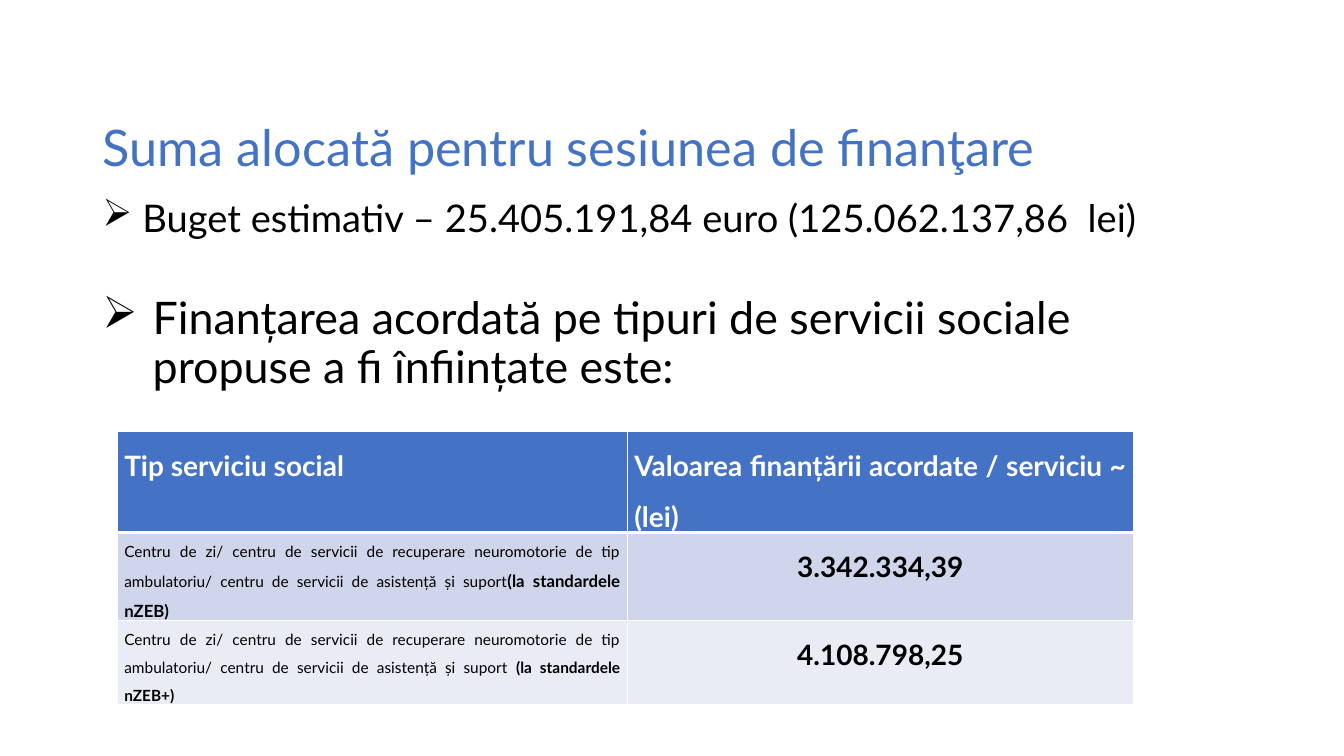
from dataclasses import dataclass

from lxml.etree import SubElement
from pptx import Presentation
from pptx.dml.color import RGBColor
from pptx.enum.text import MSO_ANCHOR as Anchor, PP_ALIGN as Align
from pptx.oxml.ns import qn
from pptx.util import Pt


@dataclass(frozen=True)
class Theme:
    font: str = "Lato"
    blue: str = "4472C4"
    black: str = "000000"
    white: str = "FFFFFF"
    band_dark: str = "CFD5EA"
    band_light: str = "E9EBF5"
    title_size: float = 36
    budget_size: float = 27.2
    funding_size: float = 32
    table_size: float = 20
    service_size: float = 11
    nzeb_size: float = 12


THEME = Theme()


@dataclass(frozen=True)
class TextRun:
    text: str
    size: float
    color: str = THEME.black
    bold: bool = False


@dataclass(frozen=True)
class Bullet:
    box: tuple[float, float, float, float]
    run: TextRun
    indent: float
    line_spacing: float
    anchor: Anchor


@dataclass(frozen=True)
class TableRow:
    height: float
    fill: str
    service: list[TextRun]
    value: TextRun
    value_align: Align
    top_border: float
    bottom_border: float


SERVICE = (
    "Centru de zi/ centru de servicii de recuperare neuromotorie de tip "
    "ambulatoriu/ centru de servicii de asistență și suport"
)
TITLE = TextRun("Suma alocată pentru sesiunea de finanţare", THEME.title_size, THEME.blue)
TITLE_BOX = (66, 72.5, 810, 69)
TABLE_BOX = (83.8, 308.4, 725.8, 191)
COLUMN_WIDTHS = (364.3, 361.5)

BULLETS = [
    Bullet(
        (66, 142, 828, 57),
        TextRun(" Buget estimativ – 25.405.191,84 euro (125.062.137,86  lei)", THEME.budget_size),
        18, 0.8, Anchor.TOP,
    ),
    Bullet(
        (66, 211, 821.5, 70),
        TextRun(
            "Finanțarea acordată pe tipuri de servicii sociale propuse a fi înființate este:",
            THEME.funding_size,
        ),
        36, 0.9, Anchor.MIDDLE,
    ),
]

ROWS = [
    TableRow(
        70, THEME.blue,
        [TextRun("Tip serviciu social", THEME.table_size, THEME.white, True)],
        TextRun("Valoarea finanțării acordate / serviciu ~ (lei)", THEME.table_size, THEME.white, True),
        Align.JUSTIFY, 1, 3,
    ),
    TableRow(
        62, THEME.band_dark,
        [
            TextRun(SERVICE, THEME.service_size),
            TextRun("(la standardele nZEB)", THEME.nzeb_size, bold=True),
        ],
        TextRun("3.342.334,39", THEME.table_size, bold=True),
        Align.CENTER, 3, 1,
    ),
    TableRow(
        59, THEME.band_light,
        [
            TextRun(SERVICE + " ", THEME.service_size),
            TextRun("(la standardele nZEB+)", THEME.service_size, bold=True),
        ],
        TextRun("4.108.798,25", THEME.table_size, bold=True),
        Align.CENTER, 1, 1,
    ),
]


def set_attributes(target, values: dict) -> None:
    for name, value in values.items():
        setattr(target, name, value)


def place(shape, box: tuple[float, float, float, float]) -> None:
    set_attributes(shape, dict(zip(("left", "top", "width", "height"), map(Pt, box))))


def write_runs(paragraph, text_runs: list[TextRun], values: dict) -> None:
    set_attributes(paragraph, values)
    for text_run in text_runs:
        run = paragraph.add_run()
        run.text = text_run.text
        set_attributes(
            run.font,
            {"name": THEME.font, "size": Pt(text_run.size), "bold": text_run.bold},
        )
        run.font.color.rgb = RGBColor.from_string(text_run.color)


def add_title(slide) -> None:
    title = slide.shapes.title
    place(title, TITLE_BOX)
    title.text_frame.vertical_anchor = Anchor.MIDDLE
    write_runs(
        title.text_frame.paragraphs[0], [TITLE], {"line_spacing": 0.9, "alignment": Align.LEFT}
    )


def add_bullet(slide, bullet: Bullet) -> None:
    shape = slide.shapes.add_textbox(*map(Pt, bullet.box))
    frame = shape.text_frame
    set_attributes(frame, {"word_wrap": True, "vertical_anchor": bullet.anchor})
    paragraph = frame.paragraphs[0]
    properties = paragraph._p.get_or_add_pPr()
    properties.set("marL", str(Pt(bullet.indent)))
    properties.set("indent", str(-Pt(bullet.indent)))
    SubElement(properties, qn("a:buChar")).set("char", "➢")
    write_runs(paragraph, [bullet.run], {"line_spacing": bullet.line_spacing})


def add_borders(cell, row: TableRow) -> None:
    properties = cell._tc.get_or_add_tcPr()
    borders = {"lnL": 1, "lnR": 1, "lnT": row.top_border, "lnB": row.bottom_border}
    for index, (side, width) in enumerate(borders.items()):
        line = SubElement(properties, qn(f"a:{side}"), w=str(Pt(width)))
        fill = SubElement(line, qn("a:solidFill"))
        SubElement(fill, qn("a:srgbClr"), val=THEME.white)
        properties.insert(index, line)


def fill_cell(cell, row: TableRow, text_runs: list[TextRun], align: Align) -> None:
    set_attributes(
        cell,
        {
            "margin_left": Pt(5), "margin_right": Pt(5),
            "margin_top": 0, "margin_bottom": 0,
            "vertical_anchor": Anchor.TOP,
        },
    )
    cell.fill.solid()
    cell.fill.fore_color.rgb = RGBColor.from_string(row.fill)
    add_borders(cell, row)
    write_runs(
        cell.text_frame.paragraphs[0], text_runs, {"line_spacing": 1.5, "alignment": align}
    )


def add_funding_table(slide) -> None:
    table = slide.shapes.add_table(len(ROWS), len(COLUMN_WIDTHS), *map(Pt, TABLE_BOX)).table
    for column, width in zip(table.columns, COLUMN_WIDTHS):
        column.width = Pt(width)
    for index, row in enumerate(ROWS):
        table.rows[index].height = Pt(row.height)
        fill_cell(table.cell(index, 0), row, row.service, Align.JUSTIFY)
        fill_cell(table.cell(index, 1), row, [row.value], row.value_align)


def main() -> None:
    presentation = Presentation()
    set_attributes(presentation, {"slide_width": Pt(960), "slide_height": Pt(540)})
    slide = presentation.slides.add_slide(presentation.slide_layouts[5])
    add_title(slide)
    for bullet in BULLETS:
        add_bullet(slide, bullet)
    add_funding_table(slide)
    presentation.save("out.pptx")


if __name__ == "__main__":
    main()
